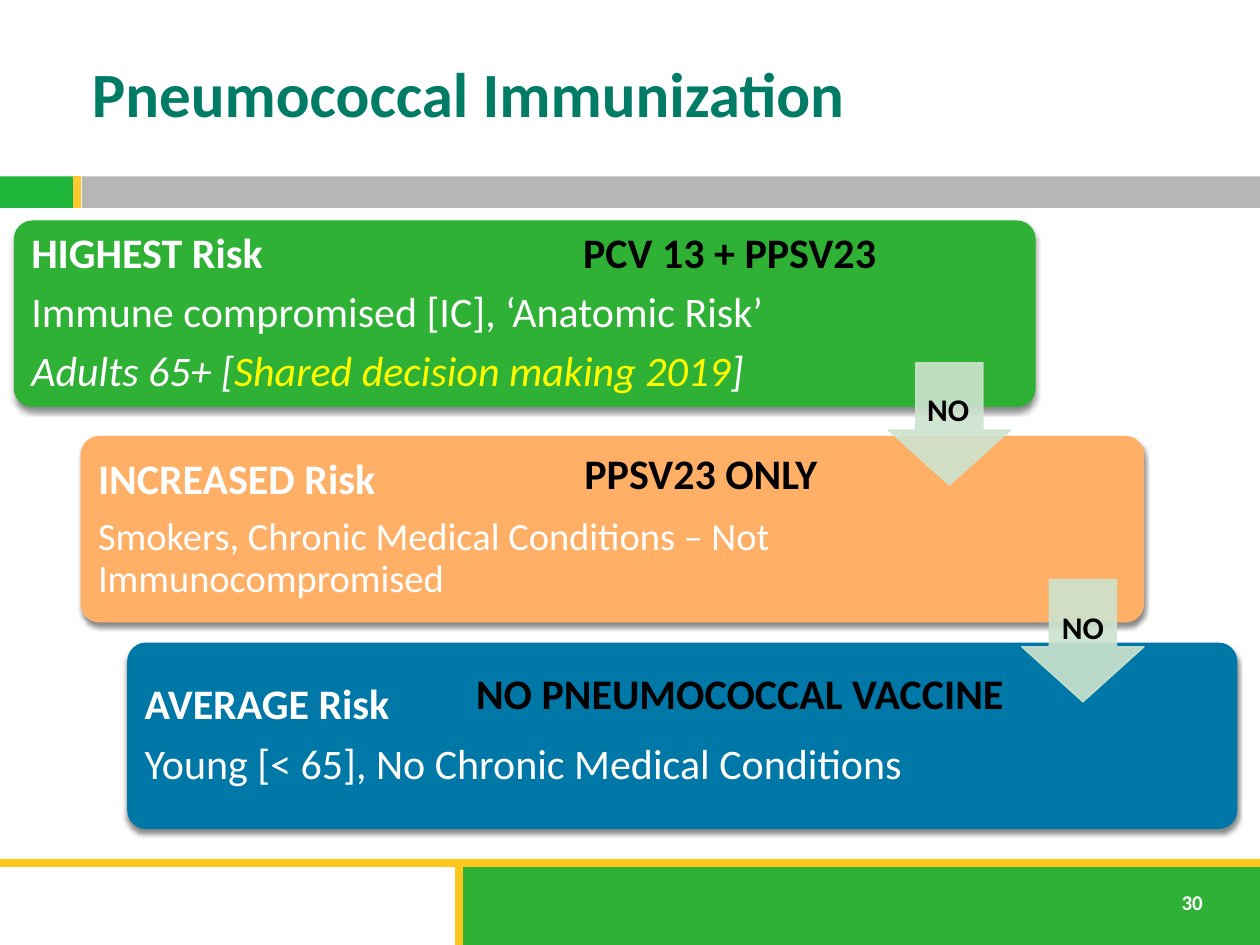
from dataclasses import dataclass

from lxml import etree
from pptx import Presentation
from pptx.dml.color import RGBColor
from pptx.enum.shapes import MSO_CONNECTOR, MSO_SHAPE
from pptx.enum.text import MSO_ANCHOR, PP_ALIGN
from pptx.oxml.ns import qn
from pptx.util import Inches, Pt

RECT = MSO_SHAPE.RECTANGLE
ROUNDED = MSO_SHAPE.ROUNDED_RECTANGLE
DOWN_ARROW = MSO_SHAPE.DOWN_ARROW
STRAIGHT = MSO_CONNECTOR.STRAIGHT
MIDDLE = MSO_ANCHOR.MIDDLE
LEFT = PP_ALIGN.LEFT


@dataclass(frozen=True)
class Theme:
    font: str = "Calibri"
    title: str = "007C66"
    green: str = "2EB135"
    bright_green: str = "1EB53A"
    gray: str = "B5B7B4"
    gold: str = "FFC61E"
    light_gold: str = "FFC82E"
    orange: str = "FFAF66"
    blue: str = "0078A7"
    arrow: str = "CDE4CE"
    yellow: str = "FFFF00"
    white: str = "FFFFFF"
    black: str = "000000"
    title_size: int = 36
    body_size: int = 24
    small_body_size: int = 22
    arrow_size: int = 18
    number_size: int = 12


THEME = Theme()


@dataclass(frozen=True)
class Run:
    text: str
    size: float = THEME.body_size
    color: str = THEME.white
    bold: bool = False
    italic: bool = False


@dataclass(frozen=True)
class RiskCard:
    left: float
    top: float
    width: float
    text_width: float
    color: str
    paragraphs: list[list[Run]]
    vaccine: str
    vaccine_box: tuple[float, float, float]  # left, top, width


@dataclass(frozen=True)
class NoArrow:
    left: float
    top: float
    label_left: float
    label_top: float


CARD_HEIGHT = 1.48
CARD_PAD = 0.04
ARROW_SIDE = 0.97

CARDS = [
    RiskCard(0.11, 1.75, 8.11, 6.56, THEME.green, [
        [Run("HIGHEST Risk", bold=True)],
        [Run("Immune compromised [IC], ‘Anatomic Risk’")],
        [Run("Adults 65+ [", italic=True),
         Run("Shared decision making 2019", color=THEME.yellow, italic=True),
         Run("]", italic=True)],
    ], "PCV 13 + PPSV23", (4.53, 1.75, 3.08)),
    RiskCard(0.64, 3.46, 8.44, 6.65, THEME.orange, [
        [Run("INCREASED Risk", bold=True)],
        [Run("Smokers, Chronic Medical Conditions – Not Immunocompromised",
             size=THEME.small_body_size)],
    ], "PPSV23 ONLY", (4.54, 3.5, 2.17)),
    RiskCard(1.01, 5.1, 8.81, 6.94, THEME.blue, [
        [Run("AVERAGE Risk", bold=True)],
        [Run("Young [< 65], No Chronic Medical Conditions")],
    ], "NO PNEUMOCOCCAL VACCINE", (3.68, 5.25, 4.48)),
]
ARROWS = [NoArrow(7.05, 2.88, 7.26, 3.05), NoArrow(8.11, 4.6, 8.33, 4.78)]


def add_run(p, run: Run) -> None:
    r = p.add_run()
    r.text = run.text
    font = r.font
    font.name, font.size = THEME.font, Pt(run.size)
    font.bold, font.italic = run.bold, run.italic
    font.color.rgb = RGBColor.from_string(run.color)


def add_box(s, kind, left: float, top: float, width: float, height: float, color: str):
    sp = s.shapes.add_shape(kind, Inches(left), Inches(top), Inches(width), Inches(height))
    sp.shadow.inherit = False
    sp.fill.solid()
    sp.fill.fore_color.rgb = RGBColor.from_string(color)
    sp.line.fill.background()
    return sp


def add_text(s, left: float, top: float, width: float, height: float, run: Run,
             wrap: bool = True) -> None:
    tf = s.shapes.add_textbox(Inches(left), Inches(top), Inches(width), Inches(height)).text_frame
    tf.word_wrap = wrap
    add_run(tf.paragraphs[0], run)


def add_line(s, x1: float, y1: float, x2: float, y2: float, color: str) -> None:
    line = s.shapes.add_connector(STRAIGHT, Inches(x1), Inches(y1), Inches(x2), Inches(y2))
    line.line.color.rgb = RGBColor.from_string(color)
    line.line.width = Pt(4.5)
    etree.SubElement(line._element.spPr, qn("a:effectLst"))


def add_shadow(sp) -> None:
    effects = sp._element.spPr.find(qn("a:effectLst"))
    shadow = etree.SubElement(effects, qn("a:outerShdw"), blurRad=str(Pt(3)),
                              dist=str(Pt(2.4)), dir="5400000", rotWithShape="0")
    color = etree.SubElement(shadow, qn("a:srgbClr"), val=THEME.black)
    etree.SubElement(color, qn("a:alpha"), val="45000")


def add_card(s, card: RiskCard) -> None:
    sp = add_box(s, ROUNDED, card.left, card.top, card.width, CARD_HEIGHT, card.color)
    sp.adjustments[0] = 0.1
    add_shadow(sp)
    tb = s.shapes.add_textbox(Inches(card.left + CARD_PAD), Inches(card.top + CARD_PAD),
                              Inches(card.text_width), Inches(CARD_HEIGHT - 2 * CARD_PAD))
    tf = tb.text_frame
    tf.word_wrap = True
    tf.vertical_anchor = MIDDLE
    tf.margin_left = tf.margin_right = tf.margin_top = tf.margin_bottom = Inches(0.1)
    for i, runs in enumerate(card.paragraphs):
        p = tf.add_paragraph() if i else tf.paragraphs[0]
        p.line_spacing = 0.9
        p.space_after = Pt(8)
        for run in runs:
            add_run(p, run)


def add_arrow(s, arrow: NoArrow) -> None:
    sp = add_box(s, DOWN_ARROW, arrow.left, arrow.top, ARROW_SIDE, ARROW_SIDE, THEME.arrow)
    sp.adjustments[0] = 0.55
    sp.adjustments[1] = 0.45
    sp.line.color.rgb = RGBColor.from_string(THEME.arrow)
    sp.line.width = Pt(0.79)
    for color in sp._element.spPr.iter(qn("a:srgbClr")):
        etree.SubElement(color, qn("a:alpha"), val="90000")


def main() -> None:
    prs = Presentation()
    prs.slide_width, prs.slide_height = Inches(10), Inches(7.5)
    s = prs.slides.add_slide(prs.slide_layouts[5])

    # Title
    title = s.shapes.title
    title.left, title.top = Inches(0.63), Inches(0.19)
    title.width, title.height = Inches(8.92), Inches(1.08)
    tf = title.text_frame
    tf.vertical_anchor = MIDDLE
    tf.paragraphs[0].alignment = LEFT
    add_run(tf.paragraphs[0],
            Run("Pneumococcal Immunization", THEME.title_size, THEME.title, bold=True))

    # Header band and footer
    add_box(s, RECT, 0, 1.4, 0.58, 0.25, THEME.bright_green)
    add_box(s, RECT, 0.65, 1.4, 9.35, 0.25, THEME.gray)
    add_box(s, RECT, 3.62, 6.84, 6.38, 0.66, THEME.green)
    add_line(s, 0, 6.85, 10, 6.85, THEME.gold)
    add_line(s, 3.64, 6.86, 3.64, 7.5, THEME.gold)
    add_line(s, 0.61, 1.4, 0.61, 1.65, THEME.light_gold)
    add_text(s, 9.28, 7.01, 0.4, 0.3, Run("30", THEME.number_size, bold=True), wrap=False)

    # Risk cards, then the arrows that overlap them
    for card in CARDS:
        add_card(s, card)
    for arrow in ARROWS:
        add_arrow(s, arrow)

    # Labels on top
    for arrow in ARROWS:
        add_text(s, arrow.label_left, arrow.label_top, 0.58, 0.4,
                 Run("NO", THEME.arrow_size, THEME.black, bold=True))
    for card in CARDS:
        left, top, width = card.vaccine_box
        add_text(s, left, top, width, 0.5, Run(card.vaccine, color=THEME.black, bold=True))

    prs.save("out.pptx")


if __name__ == "__main__":
    main()
